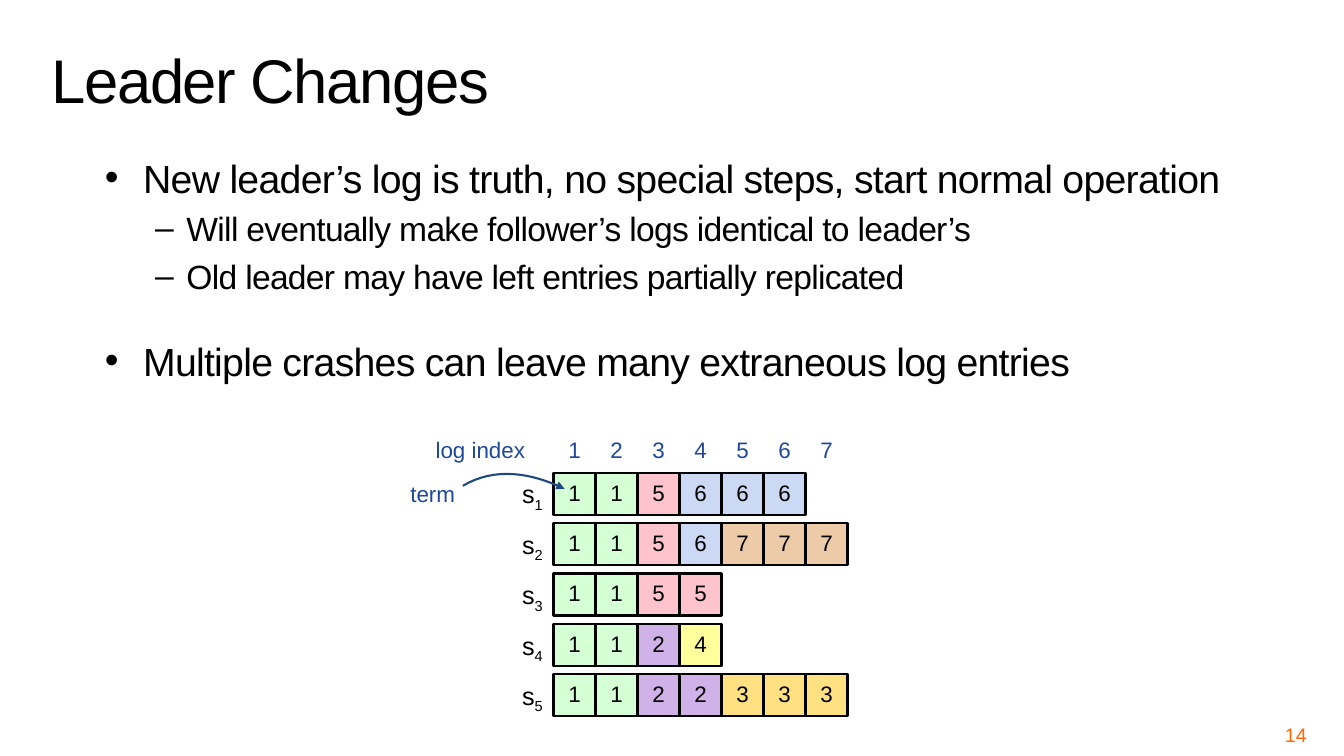
from pptx import Presentation
from pptx.dml.color import RGBColor
from pptx.enum.shapes import MSO_SHAPE as Shape
from pptx.enum.text import MSO_ANCHOR as Anchor, MSO_AUTO_SIZE as AutoSize, PP_ALIGN as Align
from pptx.oxml.ns import qn
from pptx.util import Inches, Pt
from lxml.etree import SubElement

FONT = "Arial"
BLACK = RGBColor(0x00, 0x00, 0x00)
BLUE = RGBColor(0x1F, 0x48, 0x99)
ARROW_BLUE = RGBColor(0x1F, 0x49, 0x7D)
ORANGE = RGBColor(0xFF, 0x66, 0x00)
TERM_FILLS = {
    1: RGBColor(0xD5, 0xFF, 0xD5),
    2: RGBColor(0xD1, 0xB2, 0xE8),
    3: RGBColor(0xFF, 0xE1, 0x81),
    4: RGBColor(0xFF, 0xFF, 0x9B),
    5: RGBColor(0xFF, 0xC3, 0xCE),
    6: RGBColor(0xCC, 0xD9, 0xF4),
    7: RGBColor(0xEE, 0xCB, 0xA8),
}

LOGS = [
    [1, 1, 5, 6, 6, 6],
    [1, 1, 5, 6, 7, 7, 7],
    [1, 1, 5, 5],
    [1, 1, 2, 4],
    [1, 1, 2, 2, 3, 3, 3],
]
BULLETS = [
    (0, 6, "New leader’s log is truth, no special steps, start normal operation"),
    (1, 4.8, "Will eventually make follower’s logs identical to leader’s"),
    (1, 4.8, "Old leader may have left entries partially replicated"),
    (0, 30, "Multiple crashes can leave many extraneous log entries"),
]
BULLET_STYLES = [("•", 28, 0.38, 0.38), ("–", 24, 0.81, 0.31)]

GRID_LEFT, GRID_TOP = 5.49, 4.69
CELL = 5 / 12
ROW_PITCH = 0.5
ARROW_CURVE = [(4.59, 4.82), (4.91, 4.63), (5.27, 4.69), (5.6, 4.85)]
ARROW_STEPS = 16


def style_font(paragraph, size, color, spacing=0):
    """Set the font of a paragraph, with letter spacing in points."""
    font = paragraph.font
    font.name, font.size = FONT, Pt(size)
    font.color.rgb = color
    if spacing:
        paragraph._p.pPr.find(qn("a:defRPr")).set("spc", str(int(spacing * 100)))


def set_insets(frame, inset):
    """Give all four sides of a text frame the same inset."""
    frame.margin_left = frame.margin_right = Inches(inset)
    frame.margin_top = frame.margin_bottom = Inches(inset)


def add_title(slide, text):
    """Fill and place the title placeholder."""
    title = slide.shapes.title
    title.left, title.top = Inches(0.41), Inches(0.02)
    title.width, title.height = Inches(12.62), Inches(1.17)
    frame = title.text_frame
    frame.text = text
    frame.auto_size = AutoSize.NONE
    frame.vertical_anchor = Anchor.BOTTOM
    paragraph = frame.paragraphs[0]
    paragraph.alignment = Align.LEFT
    paragraph.line_spacing = 0.8
    style_font(paragraph, 44, BLACK, -1)


def add_bullets(slide):
    """Add the two-level bullet list."""
    box = slide.shapes.add_textbox(Inches(1), Inches(1.58), Inches(12), Inches(2.5))
    frame = box.text_frame
    frame.word_wrap = True
    set_insets(frame, 0.04)
    for number, (level, space_before, text) in enumerate(BULLETS):
        paragraph = frame.add_paragraph() if number else frame.paragraphs[0]
        paragraph.text = text
        mark, size, indent, hanging = BULLET_STYLES[level]
        properties = paragraph._p.get_or_add_pPr()
        properties.set("marL", str(Inches(indent)))
        properties.set("indent", str(-Inches(hanging)))
        SubElement(properties, qn("a:buFont")).set("typeface", FONT)
        SubElement(properties, qn("a:buChar")).set("char", mark)
        paragraph.level = level
        paragraph.line_spacing = 0.8
        paragraph.space_before, paragraph.space_after = Pt(space_before), Pt(6)
        style_font(paragraph, size, BLACK, -0.5)


def add_label(shapes, left, top, width, text, size, color, align=Align.LEFT, subscript=""):
    """Add one line of text, with an optional subscript."""
    box = shapes.add_textbox(Inches(left), Inches(top), Inches(width), Inches(size / 60))
    frame = box.text_frame
    frame.word_wrap = True
    set_insets(frame, 0)
    paragraph = frame.paragraphs[0]
    paragraph.alignment = align
    paragraph.add_run().text = text
    if subscript:
        run = paragraph.add_run()
        run.text = subscript
        run._r.get_or_add_rPr().set("baseline", "-25000")
    style_font(paragraph, size, color)


def add_entry(shapes, column, row, term):
    """Add one log entry, coloured by its term."""
    entry = shapes.add_shape(
        Shape.RECTANGLE, Inches(GRID_LEFT + column * CELL), Inches(GRID_TOP + row * ROW_PITCH),
        Inches(CELL), Inches(CELL))
    entry.shadow.inherit = False
    entry.fill.solid()
    entry.fill.fore_color.rgb = TERM_FILLS[term]
    entry.line.color.rgb = BLACK
    entry.line.width = Pt(1.5)
    frame = entry.text_frame
    set_insets(frame, 0)
    frame.vertical_anchor = Anchor.MIDDLE
    frame.text = str(term)
    paragraph = frame.paragraphs[0]
    paragraph.alignment = Align.CENTER
    paragraph.line_spacing = Pt(17)
    style_font(paragraph, 16, BLACK)


def curve_point(share):
    """Return the point at a share of the arrow's cubic curve."""
    rest = 1 - share
    weights = (rest ** 3, 3 * rest ** 2 * share, 3 * rest * share ** 2, share ** 3)
    return tuple(
        Inches(sum(weight * value for weight, value in zip(weights, axis)))
        for axis in zip(*ARROW_CURVE))


def add_term_arrow(shapes):
    """Add the curved arrow from the term label to the first entry."""
    points = [curve_point(step / ARROW_STEPS) for step in range(ARROW_STEPS + 1)]
    builder = shapes.build_freeform(*points[0])
    builder.add_line_segments(points[1:], close=False)
    arrow = builder.convert_to_shape()
    arrow.shadow.inherit = False
    arrow.fill.background()
    arrow.line.color.rgb = ARROW_BLUE
    arrow.line.width = Pt(1.5)
    SubElement(arrow.line._get_or_add_ln(), qn("a:tailEnd")).set("type", "triangle")


def add_log_diagram(slide):
    """Add the logs of all servers with their labels."""
    shapes = slide.shapes.add_group_shape().shapes
    add_label(shapes, 4.32, 4.33, 1.25, "log index", 16, BLUE)
    add_label(shapes, 4.07, 4.76, 0.83, "term", 16, BLUE)
    for column in range(max(map(len, LOGS))):
        add_label(shapes, GRID_LEFT + column * CELL, 4.33, CELL,
                  str(column + 1), 16, BLUE, Align.CENTER)
    for row, log in enumerate(LOGS):
        add_label(shapes, GRID_LEFT - CELL, GRID_TOP + 0.06 + row * ROW_PITCH, CELL,
                  "s", 18, BLACK, Align.CENTER, str(row + 1))
        for column, term in enumerate(log):
            add_entry(shapes, column, row, term)
    add_term_arrow(shapes)


def main():
    """Build the slide and save it."""
    presentation = Presentation()
    presentation.slide_width, presentation.slide_height = Inches(13.33), Inches(7.5)
    slide = presentation.slides.add_slide(presentation.slide_layouts[5])
    add_title(slide, "Leader Changes")
    add_bullets(slide)
    add_log_diagram(slide)
    add_label(slide.shapes, 9.89, 7.17, 3.07, "14", 14, ORANGE, Align.RIGHT)
    presentation.save("out.pptx")


if __name__ == "__main__":
    main()
